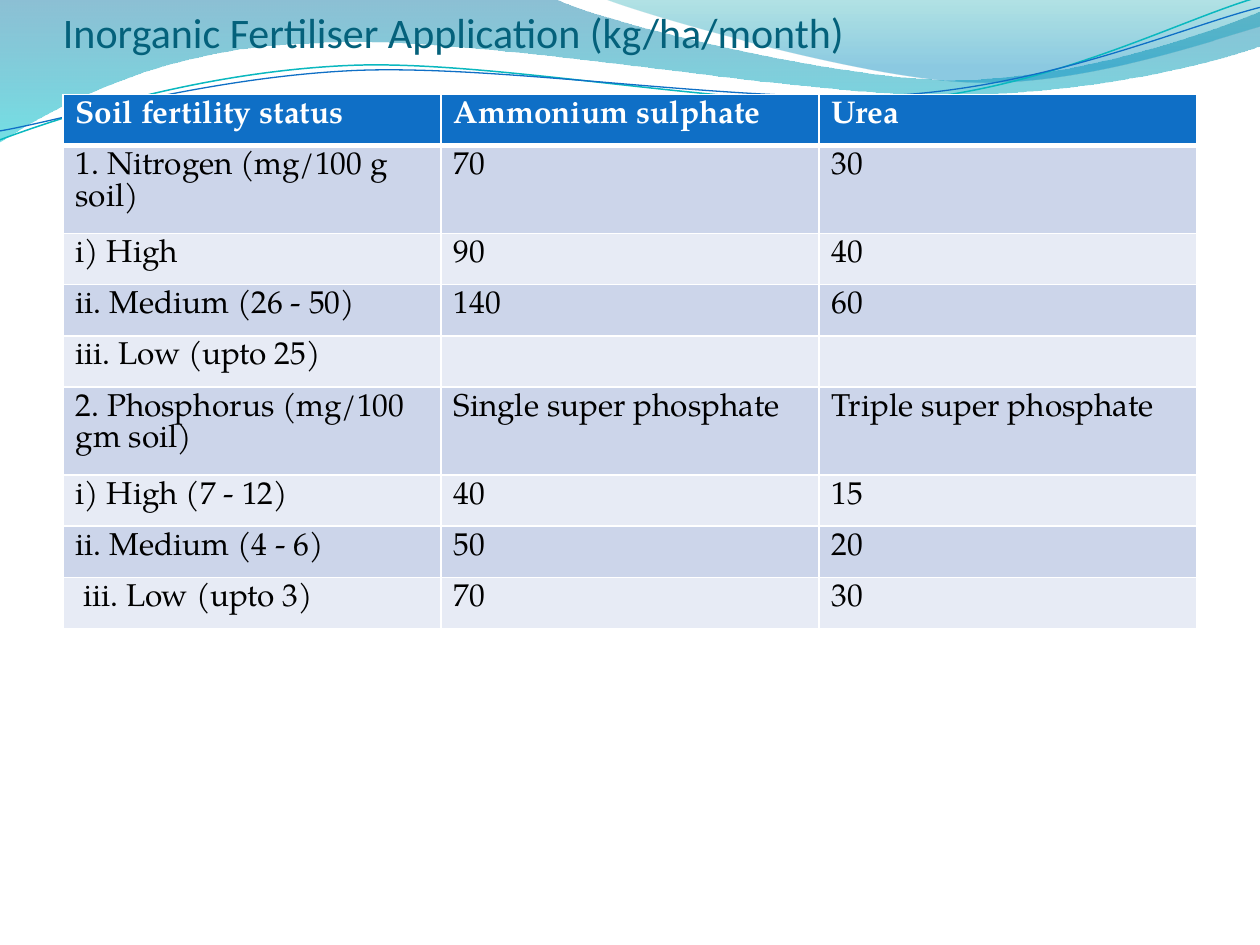
import pptx
import pptx.dml.color
import pptx.enum.text
import pptx.oxml
import pptx.oxml.ns
import pptx.util
from lxml import etree

Cm = pptx.util.Cm
Pt = pptx.util.Pt
RGBColor = pptx.dml.color.RGBColor
qn = pptx.oxml.ns.qn

WHITE = RGBColor(0xFF, 0xFF, 0xFF)
BLACK = RGBColor(0x00, 0x00, 0x00)
TITLE_TEAL = RGBColor(0x04, 0x61, 0x7B)
HEADER_BLUE = RGBColor(0x0F, 0x6F, 0xC6)
LINE_TEAL = RGBColor(0x0A, 0xB8, 0xBF)
BANDS = (RGBColor(0xCC, 0xD5, 0xEA), RGBColor(0xE7, 0xEB, 0xF5))
DEEP_BLUE = RGBColor(0x00, 0x74, 0xA1)
CYAN = RGBColor(0x00, 0xC6, 0xCF)
GREEN_TEAL = RGBColor(0x00, 0xA1, 0xA9)
SKY_BLUE = RGBColor(0x00, 0x8B, 0xBF)

TITLE = "Inorganic Fertiliser Application (kg/ha/month)"
ROWS = [
    ("Soil fertility status", "Ammonium sulphate", "Urea"),
    ("1. Nitrogen (mg/100 g soil)", "70", "30"),
    ("i) High", "90", "40"),
    ("ii. Medium (26 - 50)", "140", "60"),
    ("iii. Low (upto 25)", "", ""),
    ("2. Phosphorus (mg/100 gm soil)", "Single super phosphate", "Triple super phosphate"),
    ("i) High (7 - 12)", "40", "15"),
    ("ii. Medium (4 - 6)", "50", "20"),
    (" iii. Low (upto 3)", "70", "30"),
]

# Outlines in cm: a start point, then pairs (straight) or sixes (Bezier curve)
WAVES = [
    # outline, gradient stops (position, colour, opacity in %)
    ([(0, 0), (11.18, -0.03), (12.09, 0.43, 16.87, 1.6, 19.25, 1.6),
      (21.67, 1.6, 24.33, 0.66, 25.4, 0.23), (25.43, 0.91),
      (24.97, 1.12, 22.1, 1.93, 18.95, 1.91), (15.8, 1.91, 9.7, 0.71, 6.53, 0.86),
      (3.28, 0.91, 1.17, 2.11, -0.03, 2.87), (0, 0)],
     [(0, DEEP_BLUE, 45), (1, CYAN, 55)]),
    ([(12.17, -0.03), (12.93, 0.28, 17.32, 1.57, 19.53, 1.65),
      (21.74, 1.75, 24.41, 0.81, 25.4, 0.53), (25.4, 0), (12.17, -0.03)],
     [(0, GREEN_TEAL, 30), (0.8, SKY_BLUE, 45)]),
]
STRANDS = [
    # outline, colour, width in points
    ([(0, 2.82), (1.22, 2.36, 4.01, 1.45, 7.04, 1.32),
      (10.03, 1.19, 15.06, 2.26, 18.11, 2.03), (21.16, 1.8, 23.83, 0.38, 25.35, -0.05)],
     LINE_TEAL, 0.85),
    ([(0, 2.64), (1.19, 2.44, 4.17, 1.55, 7.19, 1.42),
      (10.24, 1.3, 15.16, 2.13, 18.21, 1.91), (21.23, 1.7, 23.9, 0.53, 25.4, 0.15)],
     HEADER_BLUE, 0.75),
]


def add_outline(page, outline, close):
    """Build a freeform through the anchors, then bend its curved parts."""
    start, *anchors = [(Cm(part[-2]), Cm(part[-1])) for part in outline]
    builder = page.shapes.build_freeform(*start)
    builder.add_line_segments(anchors, close=close)
    shape = builder.convert_to_shape()
    shape.shadow.inherit = False
    segments = list(shape.element.spPr.iter(qn("a:lnTo")))
    for segment, part in zip(segments, outline[1:]):
        if len(part) == 6:
            curve = etree.Element(qn("a:cubicBezTo"))
            for x, y in zip(part[::2], part[1::2]):
                etree.SubElement(curve, qn("a:pt"), x=str(Cm(x) - shape.left),
                                 y=str(Cm(y) - shape.top))
            segment.getparent().replace(segment, curve)
    return shape


def add_wave(page, outline, stops):
    wave = add_outline(page, outline, True)
    wave.line.fill.background()
    wave.fill.gradient()
    wave.fill.gradient_angle = 270
    for stop, (position, colour, _) in zip(wave.fill.gradient_stops, stops):
        stop.position = position
        stop.color.rgb = colour
    for node, (_, _, opacity) in zip(wave.element.spPr.iter(qn("a:srgbClr")), stops):
        etree.SubElement(node, qn("a:alpha"), val=str(opacity * 1000))


def add_strand(page, outline, colour, width):
    strand = add_outline(page, outline, False)
    strand.fill.background()
    strand.line.color.rgb = colour
    strand.line.width = Pt(width)


def write(frame, text, colour, **font):
    span = frame.paragraphs[0].add_run()
    span.text = text
    span.font.color.rgb = colour
    for name, value in font.items():
        setattr(span.font, name, value)


def add_title(page):
    box = page.shapes.add_textbox(Cm(1.27), Cm(0), Cm(22.86), Cm(3.18))
    layout = {"word_wrap": True, "vertical_anchor": pptx.enum.text.MSO_ANCHOR.TOP,
              "margin_left": 0, "margin_right": 0, "margin_top": Cm(0.13), "margin_bottom": 0}
    for name, value in layout.items():
        setattr(box.text_frame, name, value)
    write(box.text_frame, TITLE, TITLE_TEAL, name="Calibri", size=Pt(24))


def add_bottom_rule(cell, colour, width):
    rule = etree.Element(qn("a:lnB"), w=str(Pt(width)))
    fill = etree.SubElement(rule, qn("a:solidFill"))
    etree.SubElement(fill, qn("a:srgbClr"), val=str(colour))
    cell._tc.get_or_add_tcPr().insert(0, rule)


def add_fertiliser_table(page):
    row_height = Cm(1.03)
    table = page.shapes.add_table(len(ROWS), len(ROWS[0]), Cm(1.27), Cm(1.9),
                                  Cm(22.86), row_height * len(ROWS)).table
    for r, row in enumerate(ROWS):
        header = r == 0
        for c, text in enumerate(row):
            cell = table.cell(r, c)
            cell.fill.solid()
            cell.fill.fore_color.rgb = HEADER_BLUE if header else BANDS[(r - 1) % 2]
            if header:
                add_bottom_rule(cell, WHITE, 3)
            if text:
                write(cell.text_frame, text, WHITE if header else BLACK,
                      name="TeX Gyre Pagella", size=Pt(18), bold=header)


def main():
    deck = pptx.Presentation()
    deck.slide_width, deck.slide_height = Cm(25.4), Cm(19.05)
    page = deck.slides.add_slide(deck.slide_layouts[6])
    page.background.fill.solid()
    page.background.fill.fore_color.rgb = WHITE
    # Wavy banner
    for wave in WAVES:
        add_wave(page, *wave)
    for strand in STRANDS:
        add_strand(page, *strand)
    # Content
    add_title(page)
    add_fertiliser_table(page)
    deck.save("out.pptx")


if __name__ == "__main__":
    main()
